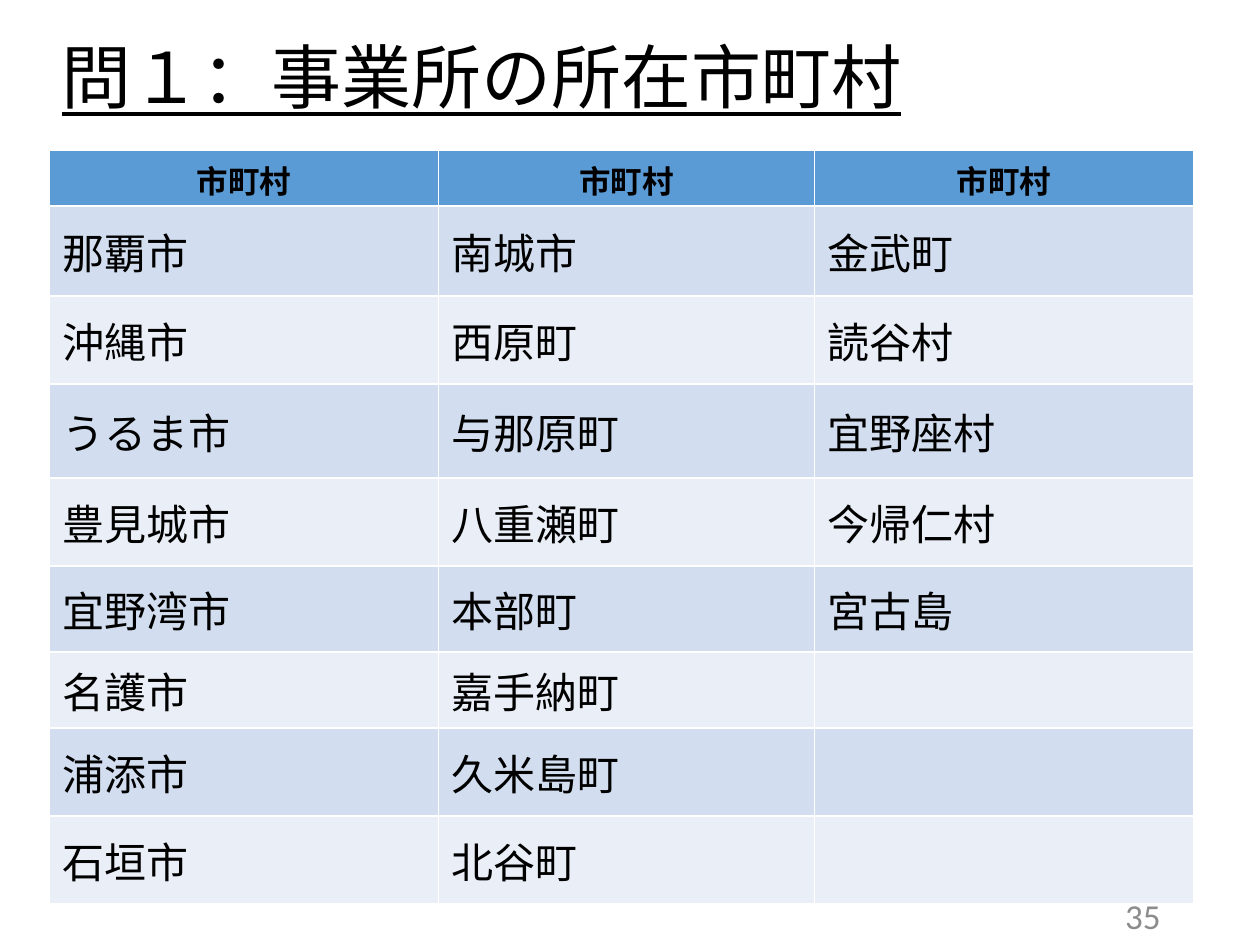
"""Build the slide listing the municipalities where offices are located."""
from lxml.etree import SubElement
from pptx import Presentation
from pptx.dml.color import RGBColor
from pptx.enum.text import MSO_ANCHOR, PP_ALIGN
from pptx.oxml.ns import qn
from pptx.util import Cm, Pt

TITLE = "問１：事業所の所在市町村"
PAGE_NUMBER = "35"
HEADING = "市町村"
MUNICIPALITIES = [
    ["那覇市", "沖縄市", "うるま市", "豊見城市", "宜野湾市", "名護市", "浦添市", "石垣市"],
    ["南城市", "西原町", "与那原町", "八重瀬町", "本部町", "嘉手納町", "久米島町", "北谷町"],
    ["金武町", "読谷村", "宜野座村", "今帰仁村", "宮古島", "", "", ""],
]
COLUMN_WIDTHS = [7.84, 7.58, 7.64]
ROW_HEIGHTS = [1.12, 1.82, 1.77, 1.9, 1.77, 1.73, 1.54, 1.77, 1.77]
COLORS = {
    "text": "000000",
    "page": "8C8C8C",
    "header": "5B9BD5",
    "odd": "D2DEEF",
    "even": "EAEFF7",
}
JAPANESE = "Noto Sans CJK JP"


def color(name):
    return RGBColor.from_string(COLORS[name])


def write(frame, text, size, align=PP_ALIGN.LEFT, face=JAPANESE, ink="text", bold=False):
    paragraph = frame.paragraphs[0]
    paragraph.text = text
    paragraph.alignment = align
    font = paragraph.font
    font.size, font.name, font.bold = Pt(size), face, bold
    font.color.rgb = color(ink)
    for run in paragraph.runs:
        run.font.name = face
        SubElement(run.font._element, qn("a:ea"), typeface=face)
    return paragraph


def add_text(slide, box, text, size, **style):
    frame = slide.shapes.add_textbox(*map(Cm, box)).text_frame
    frame.word_wrap = True
    frame.vertical_anchor = MSO_ANCHOR.MIDDLE
    return write(frame, text, size, **style)


def add_municipalities(slide):
    table = slide.shapes.add_table(
        len(ROW_HEIGHTS), len(COLUMN_WIDTHS), Cm(1), Cm(3.03),
        Cm(sum(COLUMN_WIDTHS)), Cm(sum(ROW_HEIGHTS)),
    ).table
    for row, height in zip(table.rows, ROW_HEIGHTS):
        row.height = Cm(height)
    for c, (width, names) in enumerate(zip(COLUMN_WIDTHS, MUNICIPALITIES)):
        table.columns[c].width = Cm(width)
        for r, name in enumerate([HEADING] + names):
            cell = table.cell(r, c)
            cell.fill.solid()
            if r == 0:
                cell.fill.fore_color.rgb = color("header")
                write(cell.text_frame, name, 18, align=PP_ALIGN.CENTER, bold=True)
            else:
                cell.fill.fore_color.rgb = color("odd" if r % 2 else "even")
                cell.vertical_anchor = MSO_ANCHOR.MIDDLE
                write(cell.text_frame, name, 24)


def main():
    deck = Presentation()
    deck.slide_width, deck.slide_height = Cm(25.4), Cm(19.05)
    slide = deck.slides.add_slide(deck.slide_layouts[6])
    title = add_text(slide, (1, 0.38, 22.66, 2.51), TITLE, 40)
    title.line_spacing = 0.9
    title.font.underline = True
    add_municipalities(slide)
    add_text(slide, (21.82, 18.24, 1.83, 0.43), PAGE_NUMBER, 20,
             align=PP_ALIGN.RIGHT, face="Calibri", ink="page")
    deck.save("out.pptx")


if __name__ == "__main__":
    main()
